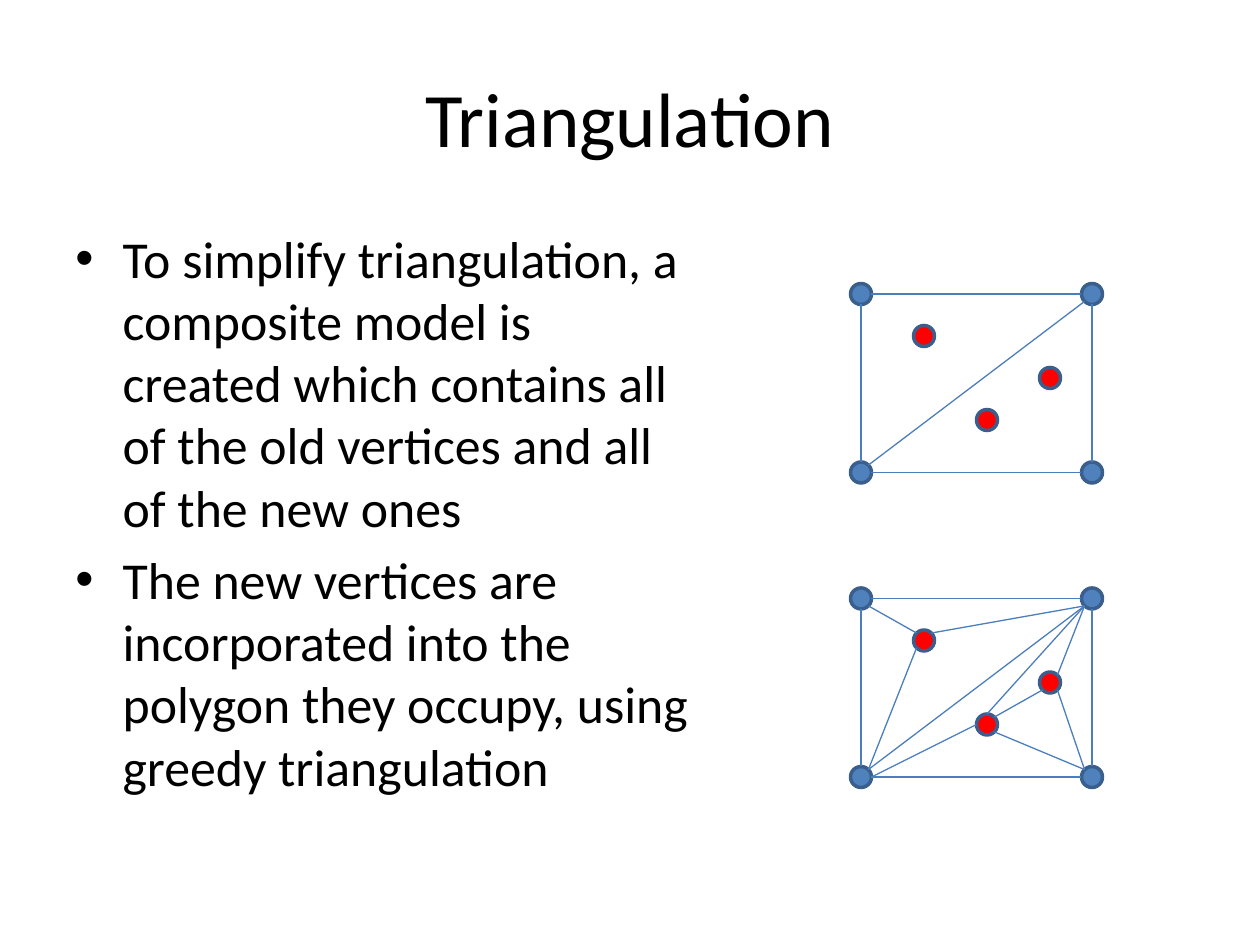
from typing import NamedTuple

from lxml import etree
from pptx import Presentation
from pptx.dml.color import RGBColor
from pptx.enum import shapes, text
from pptx.oxml import ns
from pptx.util import Pt

FONT = "Calibri"
BLACK, BLUE, RED = "000000", "4F81BD", "FF0000"
OUTLINE, EDGE = "3A5F8C", "4B7EBC"
RADIUS = 6
DIAGONAL = RADIUS * 0.5 ** 0.5
MESH_LEFT = 492
MESH_TOPS = (168, 342)


class Point(NamedTuple):
    x: float
    y: float


class Edge(NamedTuple):
    start: str
    start_side: str
    end: str
    end_side: str


SIDES = {
    "n": Point(0, -RADIUS), "e": Point(RADIUS, 0),
    "s": Point(0, RADIUS), "w": Point(-RADIUS, 0),
    "ne": Point(DIAGONAL, -DIAGONAL), "se": Point(DIAGONAL, DIAGONAL),
    "sw": Point(-DIAGONAL, DIAGONAL), "nw": Point(-DIAGONAL, -DIAGONAL),
}
OLD_VERTICES = {
    "top left": Point(0, 0), "top right": Point(132, 0),
    "bottom left": Point(0, 102), "bottom right": Point(132, 102),
}
NEW_VERTICES = {
    "upper": Point(36, 24), "right": Point(108, 48), "lower": Point(72, 72),
}
VERTICES = OLD_VERTICES | NEW_VERTICES
OLD_EDGES = [
    Edge("bottom left", "ne", "top right", "sw"),
    Edge("top left", "e", "top right", "w"),
    Edge("top left", "s", "bottom left", "n"),
    Edge("bottom left", "e", "bottom right", "w"),
    Edge("top right", "s", "bottom right", "n"),
]
NEW_EDGES = [
    Edge("top left", "se", "upper", "nw"),
    Edge("right", "ne", "top right", "sw"),
    Edge("lower", "ne", "right", "sw"),
    Edge("upper", "sw", "bottom left", "ne"),
    Edge("upper", "ne", "top right", "sw"),
    Edge("lower", "se", "bottom right", "nw"),
    Edge("right", "se", "bottom right", "nw"),
    Edge("bottom left", "e", "lower", "w"),
    Edge("lower", "n", "top right", "sw"),
]
BULLETS = [
    "To simplify triangulation, a composite model is created which contains "
    "all of the old vertices and all of the new ones",
    "The new vertices are incorporated into the polygon they occupy, using "
    "greedy triangulation",
]


def color(value: str) -> RGBColor:
    return RGBColor.from_string(value)


def add_text_frame(slide, left: float, top: float, width: float, height: float):
    frame = slide.shapes.add_textbox(Pt(left), Pt(top), Pt(width), Pt(height)).text_frame
    frame.word_wrap = True
    return frame


def add_run(paragraph, words: str, size: float) -> None:
    run = paragraph.add_run()
    run.text = words
    run.font.name = FONT
    run.font.size = Pt(size)
    run.font.color.rgb = color(BLACK)


def set_bullet(paragraph, indent: float) -> None:
    """Give the paragraph a round bullet with a hanging indent."""
    properties = paragraph._p.get_or_add_pPr()
    properties.set("marL", str(Pt(indent)))
    properties.set("indent", str(-Pt(indent)))
    etree.SubElement(properties, ns.qn("a:buFont")).set("typeface", "Arial")
    etree.SubElement(properties, ns.qn("a:buChar")).set("char", "•")


def add_title(slide) -> None:
    frame = add_text_frame(slide, 36, 21.6, 648, 90)
    frame.vertical_anchor = text.MSO_ANCHOR.MIDDLE
    paragraph = frame.paragraphs[0]
    paragraph.alignment = text.PP_ALIGN.CENTER
    add_run(paragraph, "Triangulation", 44)


def add_body(slide) -> None:
    frame = add_text_frame(slide, 36, 126, 366, 356.4)
    for index, words in enumerate(BULLETS):
        paragraph = frame.add_paragraph() if index else frame.paragraphs[0]
        paragraph.space_before = Pt(5.9)
        set_bullet(paragraph, 27)
        add_run(paragraph, words, 29.6)


def add_vertices(slide, origin: Point, vertices: dict[str, Point], fill: str) -> None:
    for vertex in vertices.values():
        shape = slide.shapes.add_shape(
            shapes.MSO_SHAPE.OVAL,
            Pt(origin.x + vertex.x - RADIUS), Pt(origin.y + vertex.y - RADIUS),
            Pt(2 * RADIUS), Pt(2 * RADIUS))
        shape.shadow.inherit = False
        shape.fill.solid()
        shape.fill.fore_color.rgb = color(fill)
        shape.line.color.rgb = color(OUTLINE)
        shape.line.width = Pt(2)


def edge_end(origin: Point, vertex: str, side: str) -> tuple[int, int]:
    center, offset = VERTICES[vertex], SIDES[side]
    return Pt(origin.x + center.x + offset.x), Pt(origin.y + center.y + offset.y)


def add_edges(slide, origin: Point, edges: list[Edge]) -> None:
    for edge in edges:
        connector = slide.shapes.add_connector(
            shapes.MSO_CONNECTOR.STRAIGHT,
            *edge_end(origin, edge.start, edge.start_side),
            *edge_end(origin, edge.end, edge.end_side))
        connector.line.color.rgb = color(EDGE)
        connector.line.width = Pt(0.75)
        etree.SubElement(connector._element.spPr, ns.qn("a:effectLst"))


def add_mesh(slide, top: float, extra_edges: list[Edge]) -> None:
    origin = Point(MESH_LEFT, top)
    add_vertices(slide, origin, OLD_VERTICES, BLUE)
    add_edges(slide, origin, OLD_EDGES)
    add_vertices(slide, origin, NEW_VERTICES, RED)
    add_edges(slide, origin, extra_edges)


def main() -> None:
    presentation = Presentation()
    presentation.slide_width, presentation.slide_height = Pt(720), Pt(540)
    slide = presentation.slides.add_slide(presentation.slide_layouts[6])
    add_title(slide)
    add_body(slide)
    for top, extra_edges in zip(MESH_TOPS, ([], NEW_EDGES)):
        add_mesh(slide, top, extra_edges)
    presentation.save("out.pptx")


if __name__ == "__main__":
    main()
